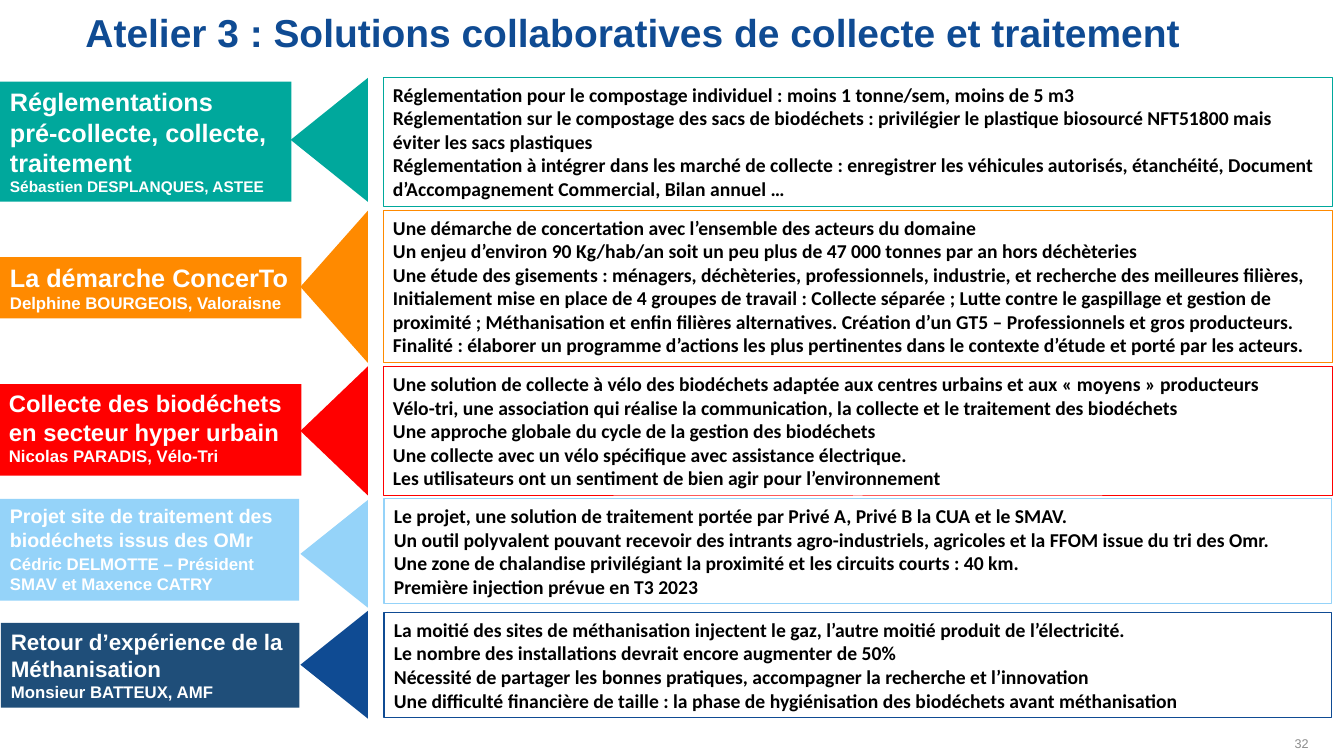
"""Build the workshop 3 slide: five talks, each with an arrow and its key points."""
from dataclasses import dataclass

from pptx import Presentation
from pptx.dml.color import RGBColor
from pptx.enum.shapes import MSO_SHAPE
from pptx.enum.text import MSO_ANCHOR, PP_ALIGN
from pptx.util import Pt

RECTANGLE = MSO_SHAPE.RECTANGLE
TRIANGLE = MSO_SHAPE.ISOSCELES_TRIANGLE
TOP, BOTTOM = MSO_ANCHOR.TOP, MSO_ANCHOR.BOTTOM
LEFT, RIGHT = PP_ALIGN.LEFT, PP_ALIGN.RIGHT

COLORS = {
    "teal": "00A89C",
    "orange": "FF8A00",
    "red": "FF0000",
    "sky": "95D3F9",
    "navy": "1F4E79",
    "blue": "0F4B93",
    "white": "FFFFFF",
    "black": "000000",
    "grey": "8C8C8C",
}
ARROW_RIGHT = 262.8


@dataclass
class Box:
    left: float
    top: float
    width: float
    height: float


@dataclass
class Talk:
    title: str
    title_size: float
    speaker: str
    speaker_size: float
    label_color: str
    accent: str
    label: Box
    arrow: Box
    panel: Box
    points: list[str]
    speaker_gap: float = 0


def arrow_box(tip: float, top: float, height: float) -> Box:
    return Box(tip, top, ARROW_RIGHT - tip, height)


TALKS = [
    Talk(
        "Réglementations\vpré-collecte, collecte, traitement", 18,
        "Sébastien DESPLANQUES, ASTEE", 11, "teal", "teal",
        Box(0, 58.3, 208.1, 85.7), arrow_box(207.6, 55.6, 88.6), Box(273.6, 55.4, 678.2, 92.2),
        [
            "Réglementation pour le compostage individuel : moins 1 tonne/sem, moins de 5 m3",
            "Réglementation sur le compostage des sacs de biodéchets : privilégier le plastique "
            "biosourcé NFT51800 mais éviter les sacs plastiques",
            "Réglementation à intégrer dans les marché de collecte : enregistrer les véhicules "
            "autorisés, étanchéité, Document d’Accompagnement Commercial, Bilan annuel …",
        ],
    ),
    Talk(
        "La démarche ConcerTo", 18,
        "Delphine BOURGEOIS, Valoraisne", 12, "orange", "orange",
        Box(0, 183.6, 215.3, 43.9), arrow_box(214.6, 150.5, 108.7), Box(273.6, 150.5, 678.2, 108.7),
        [
            "Une démarche de concertation avec l’ensemble des acteurs du domaine",
            "Un enjeu d’environ 90 Kg/hab/an soit un peu plus de 47 000 tonnes par an hors déchèteries",
            "Une étude des gisements : ménagers, déchèteries, professionnels, industrie, "
            "et recherche des meilleures filières,",
            "Initialement mise en place de 4 groupes de travail : Collecte séparée ; Lutte contre le "
            "gaspillage et gestion de proximité ; Méthanisation et enfin filières alternatives. "
            "Création d’un GT5 – Professionnels et gros producteurs.",
            "Finalité : élaborer un programme d’actions les plus pertinentes dans le contexte "
            "d’étude et porté par les acteurs.",
        ],
    ),
    Talk(
        "Collecte des biodéchets en secteur hyper urbain", 17,
        "Nicolas PARADIS, Vélo-Tri", 12, "red", "red",
        Box(-0.7, 274.3, 216, 65.5), arrow_box(214.6, 261.7, 92.2), Box(273.6, 262.1, 678.2, 92.2),
        [
            "Une solution de collecte à vélo des biodéchets adaptée aux centres urbains "
            "et aux « moyens » producteurs",
            "Vélo-tri, une association qui réalise la communication, la collecte "
            "et le traitement des biodéchets",
            "Une approche globale du cycle de la gestion des biodéchets",
            "Une collecte avec un vélo spécifique avec assistance électrique.",
            "Les utilisateurs ont un sentiment de bien agir pour l’environnement",
        ],
    ),
    Talk(
        "Projet site de traitement des biodéchets issus des OMr", 14,
        "Cédric DELMOTTE – Président SMAV et Maxence CATRY", 12, "sky", "sky",
        Box(0, 356.4, 213.8, 72.7), arrow_box(214.6, 357.1, 77), Box(274.3, 356.4, 676.8, 74.9),
        [
            "Le projet, une solution de traitement portée par Privé A, Privé B la CUA et le SMAV.",
            "Un outil polyvalent pouvant recevoir des intrants agro-industriels, agricoles "
            "et la FFOM issue du tri des Omr.",
            "Une zone de chalandise privilégiant la proximité et les circuits courts : 40 km.",
            "Première injection prévue en T3 2023",
        ],
        speaker_gap=2,
    ),
    Talk(
        "Retour d’expérience de la Méthanisation", 16,
        "Monsieur BATTEUX, AMF", 12, "navy", "blue",
        Box(0.7, 445, 213.1, 60.5), arrow_box(214.6, 436.3, 77), Box(274.3, 437.8, 676.8, 74.9),
        [
            "La moitié des sites de méthanisation injectent le gaz, l’autre moitié produit "
            "de l’électricité.",
            "Le nombre des installations devrait encore augmenter de 50%",
            "Nécessité de partager les bonnes pratiques, accompagner la recherche et l’innovation",
            "Une difficulté financière de taille : la phase de hygiénisation des biodéchets "
            "avant méthanisation",
        ],
    ),
]


def rgb(color: str) -> RGBColor:
    return RGBColor.from_string(COLORS[color])


def place(box: Box) -> tuple:
    return Pt(box.left), Pt(box.top), Pt(box.width), Pt(box.height)


def write(frame, lines: list[str], sizes: list[float], font: str, color: str,
          bold: bool = True, align=LEFT, anchor=TOP) -> None:
    frame.word_wrap = True
    frame.vertical_anchor = anchor
    for index, (line, size) in enumerate(zip(lines, sizes)):
        paragraph = frame.paragraphs[0] if index == 0 else frame.add_paragraph()
        paragraph.text = line
        paragraph.alignment = align
        paragraph.font.name = font
        paragraph.font.size = Pt(size)
        paragraph.font.bold = bold
        paragraph.font.color.rgb = rgb(color)


def add_filled(slide, preset, box: Box, fill: str, outline: str = ""):
    shape = slide.shapes.add_shape(preset, *place(box))
    shape.shadow.inherit = False
    shape.fill.solid()
    shape.fill.fore_color.rgb = rgb(fill)
    if outline:
        shape.line.color.rgb = rgb(outline)
        shape.line.width = Pt(0.75)
    else:
        shape.line.fill.background()
    return shape


def add_arrow(slide, box: Box, color: str) -> None:
    shift = (box.width - box.height) / 2
    upright = Box(box.left + shift, box.top - shift, box.height, box.width)
    add_filled(slide, TRIANGLE, upright, color).rotation = 270


def add_talk(slide, talk: Talk) -> None:
    label = add_filled(slide, RECTANGLE, talk.label, talk.label_color).text_frame
    write(label, [talk.title, talk.speaker], [talk.title_size, talk.speaker_size], "Arial", "white")
    if talk.speaker_gap:
        label.paragraphs[1].space_before = Pt(talk.speaker_gap)
    add_arrow(slide, talk.arrow, talk.accent)
    panel = add_filled(slide, RECTANGLE, talk.panel, "white", talk.accent).text_frame
    write(panel, talk.points, [14] * len(talk.points), "Calibri", "black")


def main() -> None:
    deck = Presentation()
    deck.slide_width, deck.slide_height = Pt(960), Pt(540)
    slide = deck.slides.add_slide(deck.slide_layouts[6])
    for talk in TALKS:
        add_talk(slide, talk)
    heading = slide.shapes.add_textbox(*place(Box(54, 6.5, 828, 44.6))).text_frame
    write(heading, ["Atelier 3 : Solutions collaboratives de collecte et traitement"],
          [27.8], "Arial", "blue")
    heading.paragraphs[0].line_spacing = 0.9
    page_number = slide.shapes.add_textbox(*place(Box(725.8, 522, 216, 18))).text_frame
    write(page_number, ["32"], [9], "Arial", "grey", bold=False, align=RIGHT, anchor=BOTTOM)
    deck.save("out.pptx")


if __name__ == "__main__":
    main()
